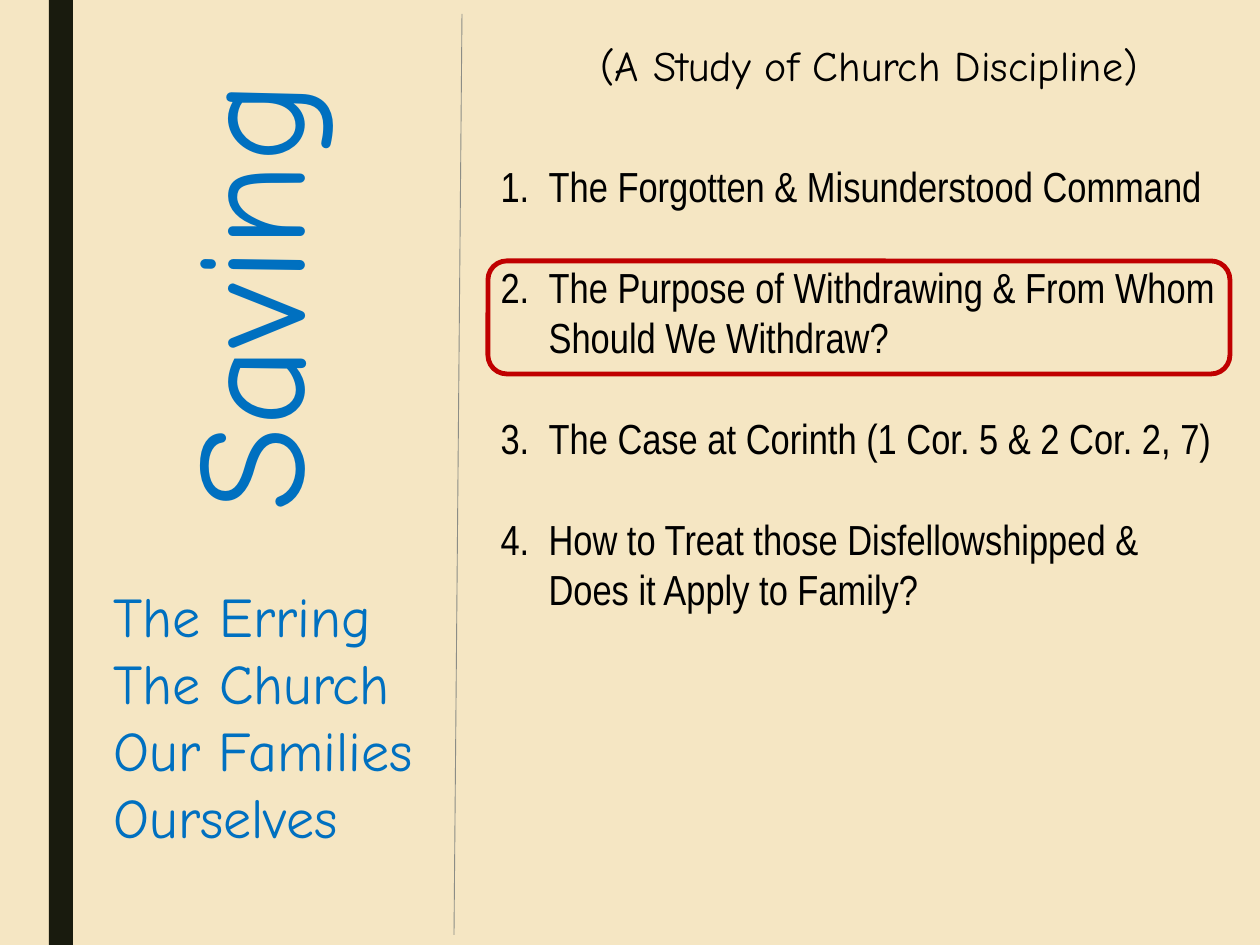
import dataclasses

import pptx
import pptx.dml.color
import pptx.enum.shapes
import pptx.enum.text
import pptx.oxml.ns
import pptx.util
from lxml import etree

PX = 914400 / 126
ALIGN = pptx.enum.text.PP_ALIGN
ANCHOR = pptx.enum.text.MSO_ANCHOR
SHAPE = pptx.enum.shapes.MSO_SHAPE


@dataclasses.dataclass(frozen=True)
class Theme:
    """Colours, fonts and type sizes of the slide."""
    background: str = "F5E6C3"
    band: str = "191B0E"
    accent: str = "0070C0"
    ink: str = "000000"
    rule: str = "8C8D86"
    highlight: str = "C00000"
    script_font: str = "Comic Neue"
    list_font: str = "Arial Narrow"
    title_size: int = 88
    goal_size: int = 32
    text_size: int = 24
    item_gap: float = 28.8
    rule_width: float = 0.5
    highlight_width: float = 2.75


THEME = Theme()
GOALS = ["The Erring", "The Church", "Our Families", "Ourselves"]
LESSONS = [
    "The Forgotten & Misunderstood Command",
    "The Purpose of Withdrawing & From Whom Should We Withdraw?",
    "The Case at Corinth (1 Cor. 5 & 2 Cor. 2, 7)",
    "How to Treat those Disfellowshipped & Does it Apply to Family?",
]


def emu(px):
    """Convert px to EMU."""
    return pptx.util.Emu(round(px * PX))


def rgb(value):
    """Return a colour from its hex value."""
    return pptx.dml.color.RGBColor.from_string(value)


def place(part, box):
    """Move and size a part to a px box."""
    part.left, part.top, part.width, part.height = map(emu, box)


def write(part, lines, *, size, font=THEME.script_font, color=THEME.accent,
          align=ALIGN.LEFT, anchor=ANCHOR.TOP, wrap=True, gap=0):
    """Fill a part with formatted paragraphs and return them."""
    frame = part.text_frame
    frame.text = "\n".join(lines)
    frame.auto_size = pptx.enum.text.MSO_AUTO_SIZE.NONE
    frame.word_wrap = wrap
    frame.vertical_anchor = anchor
    for index, paragraph in enumerate(frame.paragraphs):
        paragraph.alignment = align
        paragraph.space_before = pptx.util.Pt(gap if index else 0)
        for run in paragraph.runs:
            run.font.size = pptx.util.Pt(size)
            run.font.name = font
            run.font.color.rgb = rgb(color)
    return frame.paragraphs


def number(paragraph, indent):
    """Give a paragraph an automatic number with a hanging indent."""
    properties = paragraph._p.get_or_add_pPr()
    properties.set("marL", str(emu(indent)))
    properties.set("indent", str(-emu(indent)))
    bullet = etree.SubElement(properties, pptx.oxml.ns.qn("a:buAutoNum"))
    bullet.set("type", "arabicPeriod")


def add_band(slide, box):
    """Draw the dark vertical band."""
    band = slide.shapes.add_shape(SHAPE.RECTANGLE, *map(emu, box))
    band.shadow.inherit = False
    band.fill.solid()
    band.fill.fore_color.rgb = rgb(THEME.band)
    band.line.fill.background()


def add_theme_panel(slide, box):
    """Place the upright title above the list of goals."""
    left, top, width, height = box
    length, depth = 527, 199
    title = slide.shapes.title
    place(title, (left + (width - length) // 2 - 37, top + 197, length, depth))
    title.rotation = 270
    write(title, ["Saving"], size=THEME.title_size, align=ALIGN.CENTER,
          anchor=ANCHOR.MIDDLE)
    goals = slide.shapes.add_textbox(
        *map(emu, (left, top + 575, width, 285)))
    write(goals, GOALS, size=THEME.goal_size, wrap=False)


def add_divider(slide, box):
    """Draw the thin slanted rule between the two panels."""
    left, top, width, height = box
    divider = slide.shapes.add_connector(
        pptx.enum.shapes.MSO_CONNECTOR.STRAIGHT,
        *map(emu, (left, top + height, left + width, top)))
    divider.line.color.rgb = rgb(THEME.rule)
    divider.line.width = pptx.util.Pt(THEME.rule_width)
    etree.SubElement(divider._element.spPr, pptx.oxml.ns.qn("a:effectLst"))


def add_lesson_panel(slide, box):
    """Place the subtitle, the numbered lessons and the current-lesson frame."""
    left, top, width, height = box
    subtitle = slide.shapes.add_textbox(
        *map(emu, (left, top + 33, width, 63)))
    write(subtitle, ["(A Study of Church Discipline)"], size=THEME.text_size,
          color=THEME.ink, align=ALIGN.CENTER)

    lessons = slide.placeholders[1]
    place(lessons, (left, top + 154, width - 20, 471))
    for paragraph in write(lessons, LESSONS, size=THEME.text_size,
                           font=THEME.list_font, color=THEME.ink,
                           gap=THEME.item_gap):
        number(paragraph, 48)

    current = slide.shapes.add_shape(
        SHAPE.ROUNDED_RECTANGLE,
        *map(emu, (left, top + 261, width - 20, 113)))
    current.shadow.inherit = False
    current.fill.background()
    current.line.color.rgb = rgb(THEME.highlight)
    current.line.width = pptx.util.Pt(THEME.highlight_width)


def main():
    """Build and save the slide."""
    deck = pptx.Presentation()
    deck.slide_width, deck.slide_height = emu(1260), emu(945)
    slide = deck.slides.add_slide(deck.slide_layouts[1])
    slide.background.fill.solid()
    slide.background.fill.fore_color.rgb = rgb(THEME.background)
    add_band(slide, (49, 0, 24, 945))
    add_theme_panel(slide, (101, 0, 357, 945))
    add_divider(slide, (454, 14, 8, 921))
    add_lesson_panel(slide, (488, 0, 762, 945))
    deck.save("out.pptx")


if __name__ == "__main__":
    main()
